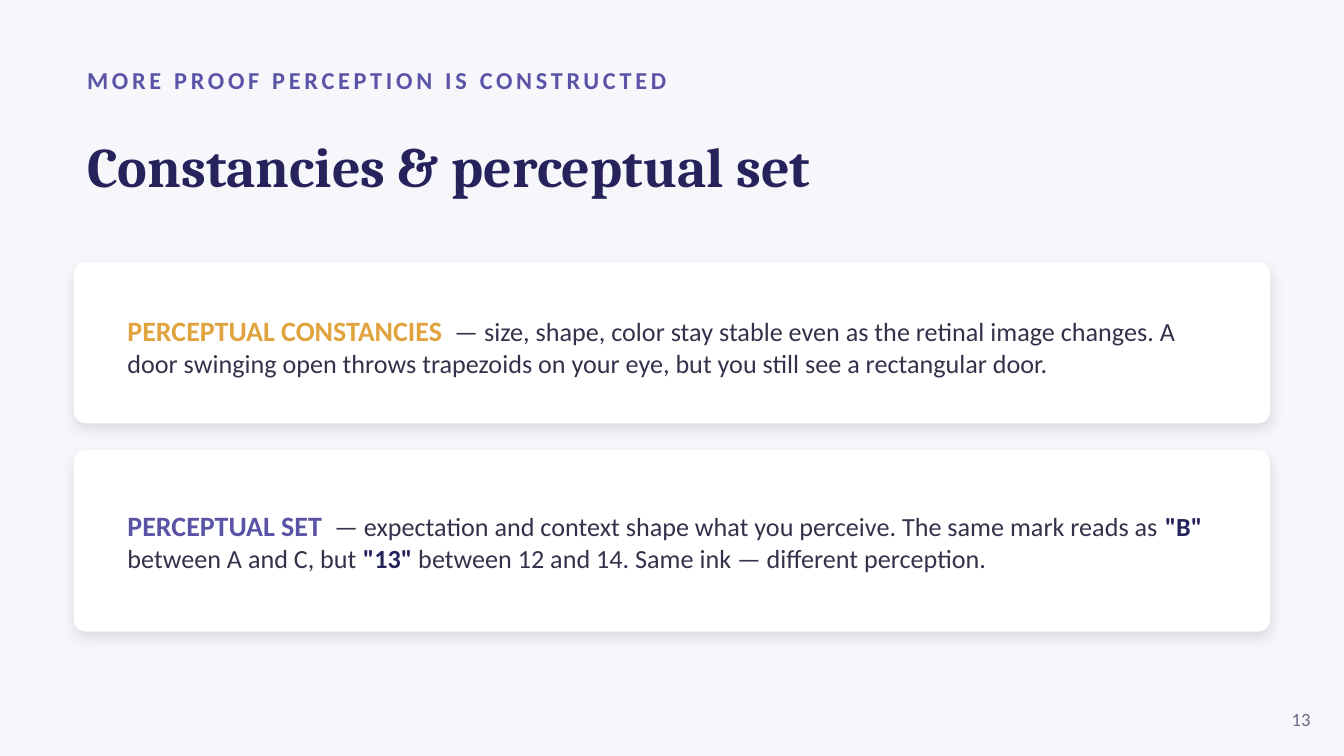
from lxml import etree
from pptx import Presentation
from pptx import util as u
from pptx.dml.color import RGBColor
from pptx.enum import shapes, text
from pptx.oxml import ns

HUES = {
    "back": "F7F7FB",
    "card": "FFFFFF",
    "navy": "26235C",
    "violet": "5B53A6",
    "amber": "E0A33E",
    "ink": "33324A",
    "gray": "6B6A86",
    "shade": "000000",
}
LEFT, WIDTH = 0.55, 8.9
RADIUS = 0.09


def hue(name):
    return RGBColor.from_string(HUES[name])


def add_run(para, words, size=14, color="ink", bold=False, face="Calibri", track=0):
    """Add one formatted run; track is letter spacing in points."""
    run = para.add_run()
    run.text = words
    font = run.font
    font.name, font.size, font.bold = face, u.Pt(size), bold
    font.color.rgb = hue(color)
    if track:
        run._r.get_or_add_rPr().set("spc", str(track * 100))


def set_frame(shape, align=text.PP_ALIGN.LEFT):
    """Prepare a text frame and return its first paragraph."""
    frame = shape.text_frame
    frame.word_wrap = True
    frame.auto_size = text.MSO_AUTO_SIZE.NONE
    frame.vertical_anchor = text.MSO_ANCHOR.MIDDLE
    para = frame.paragraphs[0]
    para.alignment = align
    return para


def add_box(slide, left, top, width, height, **kind):
    box = slide.shapes.add_textbox(*map(u.Inches, (left, top, width, height)))
    return set_frame(box, **kind)


def add_title(slide, words):
    title = slide.shapes.title
    title.left, title.top = u.Inches(LEFT), u.Inches(0.78)
    title.width, title.height = u.Inches(WIDTH), u.Inches(0.9)
    add_run(set_frame(title), words, size=30, color="navy", bold=True, face="Cambria")


def add_shadow(shape):
    """Give a soft shadow that falls straight down."""
    shape.shadow.inherit = False
    effects = shape._element.spPr.find(ns.qn("a:effectLst"))
    outer = etree.SubElement(
        effects, ns.qn("a:outerShdw"), blurRad=str(u.Pt(7)), dist=str(u.Pt(3)),
        dir="5400000", algn="bl", rotWithShape="0")
    color = etree.SubElement(outer, ns.qn("a:srgbClr"), val=HUES["shade"])
    etree.SubElement(color, ns.qn("a:alpha"), val="10000")


def add_card(slide, top, height, depth, label, color, parts):
    """Draw a card with a coloured label and (words, is key) parts."""
    card = slide.shapes.add_shape(
        shapes.MSO_SHAPE.ROUNDED_RECTANGLE,
        *map(u.Inches, (LEFT, top, WIDTH, height)))
    card.adjustments[0] = RADIUS / height
    card.fill.solid()
    card.fill.fore_color.rgb = hue("card")
    card.line.fill.background()
    add_shadow(card)

    para = add_box(slide, LEFT + 0.3, top + 0.2, WIDTH - 0.6, depth)
    add_run(para, label + " ", size=15, color=color, bold=True)
    for words, key in parts:
        add_run(para, words, color="navy" if key else "ink", bold=key)


def main():
    deck = Presentation()
    # Widescreen, 16 to 9
    deck.slide_width = u.Inches(10)
    deck.slide_height = deck.slide_width * 9 // 16
    slide = deck.slides.add_slide(deck.slide_layouts[5])
    slide.background.fill.solid()
    slide.background.fill.fore_color.rgb = hue("back")

    # Heading
    para = add_box(slide, LEFT, 0.42, 9, 0.35)
    add_run(para, "MORE PROOF PERCEPTION IS CONSTRUCTED",
            size=13, color="violet", bold=True, track=2)
    add_title(slide, "Constancies & perceptual set")

    # Cards
    add_card(slide, 1.95, 1.2, 0.85, "PERCEPTUAL CONSTANCIES", "amber", [
        (" — size, shape, color stay stable even as the retinal image changes. "
         "A door swinging open throws trapezoids on your eye, "
         "but you still see a rectangular door.", False),
    ])
    add_card(slide, 3.35, 1.35, 0.95, "PERCEPTUAL SET", "violet", [
        (" — expectation and context shape what you perceive. "
         "The same mark reads as ", False),
        ('"B"', True),
        (" between A and C, but ", False),
        ('"13"', True),
        (" between 12 and 14. Same ink — different perception.", False),
    ])

    # Page number
    para = add_box(slide, 9.35, 5.2, 0.5, 0.3, align=text.PP_ALIGN.RIGHT)
    add_run(para, "13", size=10, color="gray")

    deck.save("out.pptx")


if __name__ == "__main__":
    main()
